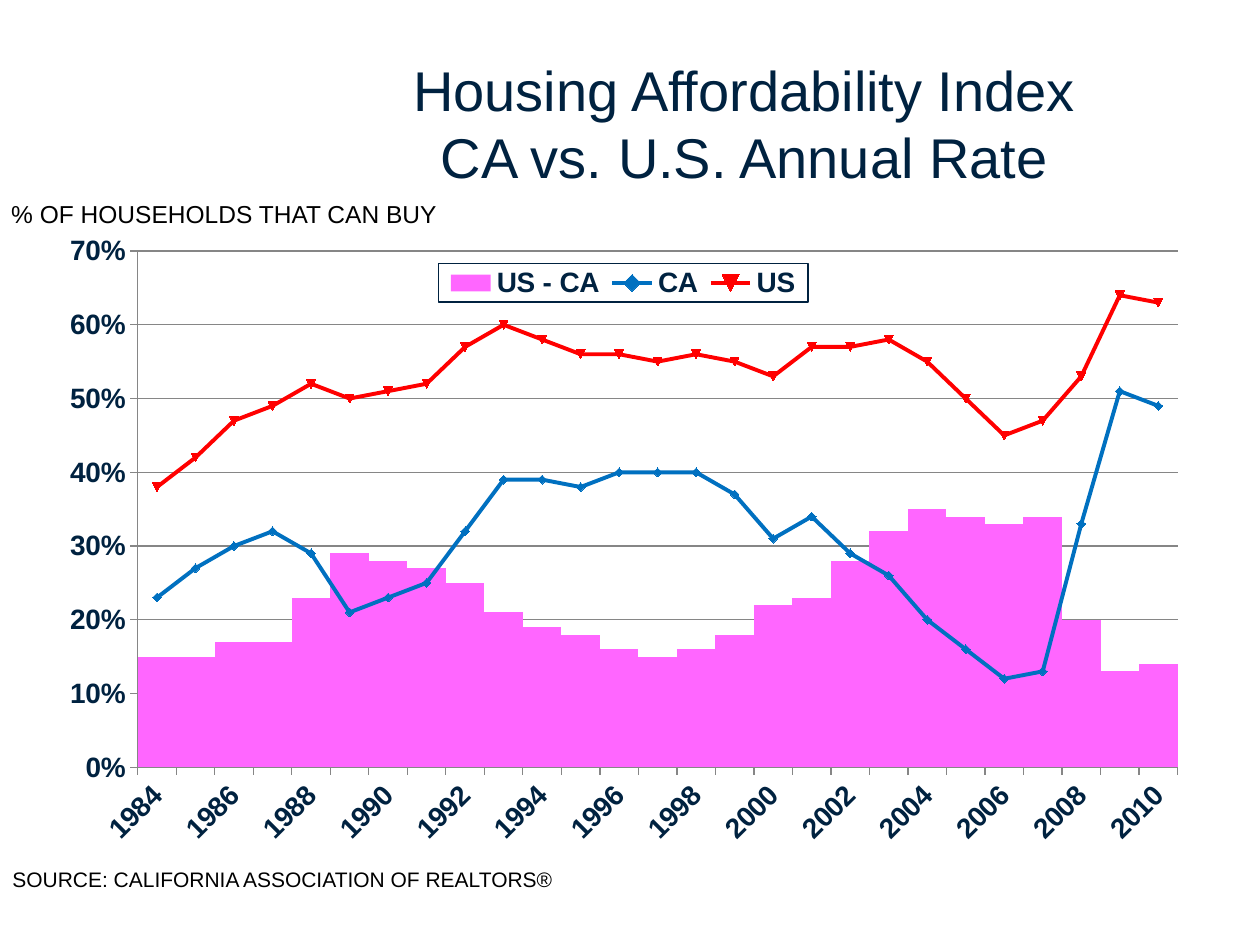
from dataclasses import dataclass

import pptx
import pptx.chart.data
import pptx.dml.color
import pptx.enum.chart
import pptx.enum.text
import pptx.oxml
import pptx.oxml.ns
import pptx.util
from pptx.util import Inches


@dataclass(frozen=True)
class Theme:
    """Colours, font and type sizes of the slide."""

    font: str = "Arial"
    navy: str = "002240"
    black: str = "000000"
    white: str = "FFFFFF"
    grid: str = "868686"
    gap: str = "FF66FF"
    california: str = "0070C0"
    nation: str = "FF0000"
    title_size: int = 32
    chart_size: int = 16
    unit_size: int = 14
    source_size: int = 12


THEME = Theme()
YEARS = range(1984, 2011)
CA_PERCENT = [23, 27, 30, 32, 29, 21, 23, 25, 32, 39, 39, 38, 40, 40,
              40, 37, 31, 34, 29, 26, 20, 16, 12, 13, 33, 51, 49]
US_PERCENT = [38, 42, 47, 49, 52, 50, 51, 52, 57, 60, 58, 56, 56, 55,
              56, 55, 53, 57, 57, 58, 55, 50, 45, 47, 53, 64, 63]


def rgb(value):
    """Return a colour object for a hex string."""
    return pptx.dml.color.RGBColor.from_string(value)


def chart_xml(tag, content="", attributes=""):
    """Build a chart element with its namespaces declared."""
    spaces = pptx.oxml.ns.nsdecls("c", "a")
    return pptx.oxml.parse_xml(f"<c:{tag} {spaces} {attributes}>{content}</c:{tag}>")


def style_font(font, size, color, bold=False):
    """Apply the theme font with a size and colour."""
    font.name = THEME.font
    font.size = pptx.util.Pt(size)
    font.bold = bold
    font.color.rgb = rgb(color)


def add_run(paragraph, text, size, color):
    """Append one formatted run."""
    run = paragraph.add_run()
    run.text = text
    style_font(run.font, size, color)


def place_title(slide, box, lines):
    """Move the title placeholder into its box and fill it line by line."""
    title = slide.shapes.title
    title.left, title.top, title.width, title.height = box
    frame = title.text_frame
    frame.word_wrap = True
    frame.auto_size = pptx.enum.text.MSO_AUTO_SIZE.NONE
    frame.vertical_anchor = pptx.enum.text.MSO_ANCHOR.TOP
    paragraph = frame.paragraphs[0]
    paragraph.alignment = pptx.enum.text.PP_ALIGN.CENTER
    for index, line in enumerate(lines):
        if index:
            paragraph.add_line_break()
        add_run(paragraph, line, THEME.title_size, THEME.navy)


def add_caption(slide, box, text, size, wrap):
    """Add a single-line caption in the given box."""
    frame = slide.shapes.add_textbox(*box).text_frame
    frame.word_wrap = wrap
    frame.auto_size = pptx.enum.text.MSO_AUTO_SIZE.SHAPE_TO_FIT_TEXT
    add_run(frame.paragraphs[0], text, size, THEME.black)


def set_layout(parent, index, x, y, w, h, inner=False):
    """Give a chart part a manual layout in fractions of the chart."""
    for old in parent.findall(pptx.oxml.ns.qn("c:layout")):
        parent.remove(old)
    target = '<c:layoutTarget val="inner"/>' if inner else ""
    parent.insert(index, chart_xml(
        "layout",
        f'<c:manualLayout>{target}<c:xMode val="edge"/><c:yMode val="edge"/>'
        f'<c:x val="{x}"/><c:y val="{y}"/><c:w val="{w}"/><c:h val="{h}"/>'
        "</c:manualLayout>"))


def move_rates_to_lines(chart):
    """Turn every series after the first into a line on the same axes."""
    qn = pptx.oxml.ns.qn
    bars = chart.plots[0]._element
    lines = chart_xml("lineChart", '<c:grouping val="standard"/>'
                      '<c:varyColors val="0"/><c:marker val="1"/>')
    marker = lines.find(qn("c:marker"))
    for series in bars.findall(qn("c:ser"))[1:]:
        for bar_only in series.findall(qn("c:invertIfNegative")):
            series.remove(bar_only)
        marker.addprevious(series)
    for axis in bars.findall(qn("c:axId")):
        lines.append(chart_xml("axId", attributes=f'val="{axis.get("val")}"'))
    bars.addnext(lines)


def style_series(chart):
    """Colour the gap columns and the two rate lines."""
    columns, rates = chart.plots
    columns.gap_width = 0
    columns.overlap = 100
    columns.vary_by_categories = False
    gap_fill = columns.series[0].format.fill
    gap_fill.solid()
    gap_fill.fore_color.rgb = rgb(THEME.gap)
    for rate, color in zip(rates.series, (THEME.california, THEME.nation)):
        rate.smooth = False
        rate.format.line.color.rgb = rgb(color)
        rate.format.line.width = pptx.util.Pt(2.25)
        rate.marker.style = pptx.enum.chart.XL_MARKER_STYLE.AUTOMATIC
        rate.marker.size = 5
        rate.marker.format.fill.solid()
        rate.marker.format.fill.fore_color.rgb = rgb(color)
        rate.marker.format.line.color.rgb = rgb(color)


def style_axes(chart):
    """Set scale, ticks, gridlines and slanted year labels."""
    qn = pptx.oxml.ns.qn
    years, percent = chart.category_axis, chart.value_axis
    for axis in (years, percent):
        axis.major_tick_mark = pptx.enum.chart.XL_TICK_MARK.OUTSIDE
        axis.format.line.color.rgb = rgb(THEME.grid)
        style_font(axis.tick_labels.font, THEME.chart_size, THEME.navy, True)
    percent.minimum_scale, percent.maximum_scale = 0, 0.7
    percent.major_unit = 0.1
    percent.tick_labels.number_format = "0%"
    percent.tick_labels.number_format_is_linked = False
    percent.has_major_gridlines = True
    percent.major_gridlines.format.line.color.rgb = rgb(THEME.grid)
    years._element.find(qn("c:txPr")).find(qn("a:bodyPr")).set("rot", "-2700000")
    last = years._element.find(qn("c:noMultiLvlLbl"))
    for tag, step in (("tickLblSkip", 2), ("tickMarkSkip", 1)):
        last.addprevious(chart_xml(tag, attributes=f'val="{step}"'))


def style_legend(chart):
    """Frame the legend and lay it over the top of the plot."""
    chart.has_legend = True
    legend = chart.legend
    legend.position = pptx.enum.chart.XL_LEGEND_POSITION.TOP
    legend.include_in_layout = True
    style_font(legend.font, THEME.chart_size, THEME.navy, True)
    set_layout(legend._element, 1, 0.34, 0.06, 0.32, 0.06)
    legend._element.find(pptx.oxml.ns.qn("c:txPr")).addprevious(chart_xml(
        "spPr",
        f'<a:solidFill><a:srgbClr val="{THEME.white}"/></a:solidFill>'
        f'<a:ln w="9525"><a:solidFill><a:srgbClr val="{THEME.navy}"/></a:solidFill></a:ln>'))


def add_affordability_chart(slide, box):
    """Add the combined chart of both rates and their gap."""
    data = pptx.chart.data.CategoryChartData(number_format="0%")
    data.categories = [str(year) for year in YEARS]
    gap = [us - ca for us, ca in zip(US_PERCENT, CA_PERCENT)]
    for name, values in (("US - CA", gap), ("CA", CA_PERCENT), ("US", US_PERCENT)):
        data.add_series(name, [value / 100 for value in values])
    kind = pptx.enum.chart.XL_CHART_TYPE.COLUMN_STACKED
    chart = slide.shapes.add_chart(kind, *box, data).chart
    chart.has_title = False
    style_font(chart.font, THEME.chart_size, THEME.navy, True)
    move_rates_to_lines(chart)
    style_series(chart)
    style_axes(chart)
    style_legend(chart)
    set_layout(chart.plots[0]._element.getparent(), 0, 0.08, 0.04, 0.9, 0.81, True)


def main():
    """Build the slide and save it."""
    deck = pptx.Presentation()
    deck.slide_width, deck.slide_height = Inches(10), Inches(7.5)
    slide = deck.slides.add_slide(deck.slide_layouts[5])
    place_title(slide, (Inches(2.08), Inches(0.39), Inches(7.66), Inches(0.76)),
                ("Housing Affordability Index", "CA vs. U.S. Annual Rate"))
    add_affordability_chart(slide, (Inches(0.36), Inches(1.79), Inches(9.17), Inches(5.06)))
    add_caption(slide, (Inches(0), Inches(6.83), Inches(4.61), Inches(0.3)),
                "SOURCE: CALIFORNIA ASSOCIATION OF REALTORS®", THEME.source_size, False)
    add_caption(slide, (Inches(-0.01), Inches(1.53), Inches(5.92), Inches(0.33)),
                "% OF HOUSEHOLDS THAT CAN BUY", THEME.unit_size, True)
    deck.save("out.pptx")


if __name__ == "__main__":
    main()
